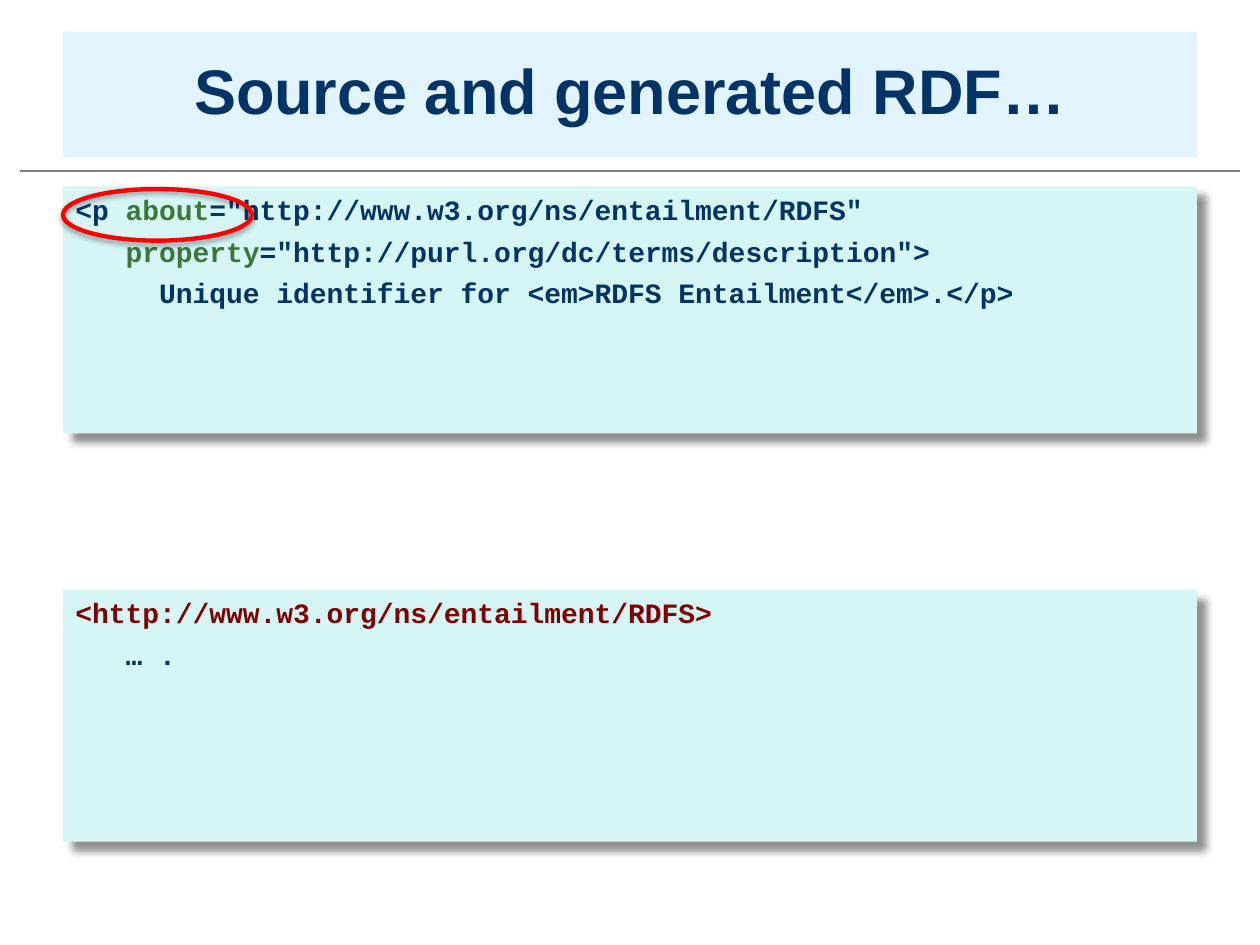
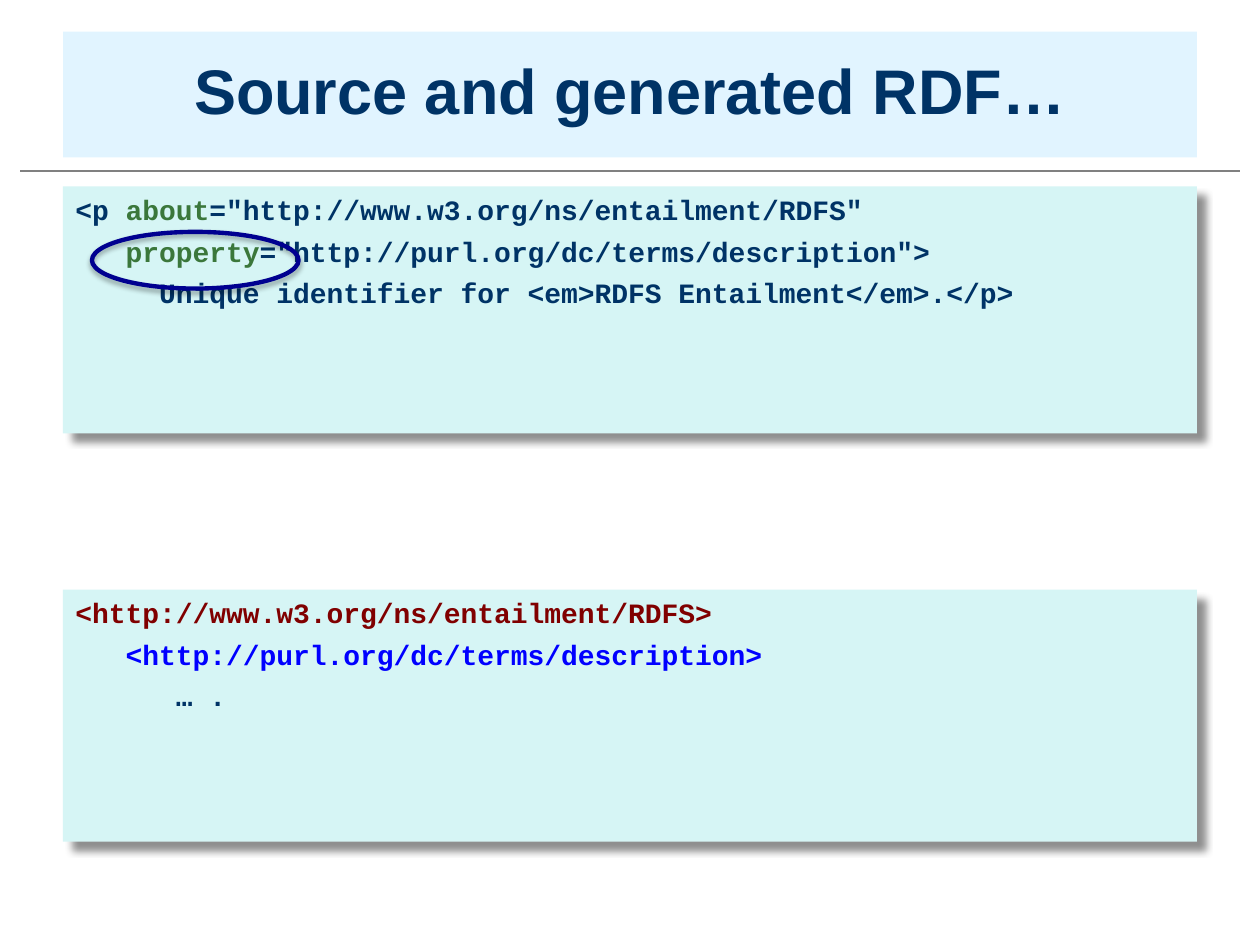
from dataclasses import dataclass

from lxml import etree
from pptx import Presentation
from pptx.dml.color import RGBColor
from pptx.enum.shapes import MSO_CONNECTOR, MSO_SHAPE
from pptx.enum.text import MSO_ANCHOR, MSO_AUTO_SIZE, PP_ALIGN
from pptx.oxml.ns import qn
from pptx.util import Inches, Pt

RECTANGLE, OVAL = MSO_SHAPE.RECTANGLE, MSO_SHAPE.OVAL
STRAIGHT = MSO_CONNECTOR.STRAIGHT
TOP, MIDDLE = MSO_ANCHOR.TOP, MSO_ANCHOR.MIDDLE
LEFT, CENTER = PP_ALIGN.LEFT, PP_ALIGN.CENTER
NO_AUTOFIT = MSO_AUTO_SIZE.NONE
TITLE_ONLY = 5

COLORS = {
    "text": "003366",
    "title_band": "E1F4FF",
    "panel": "D6F5F5",
    "rule": "808080",
    "attribute": "3B773B",
    "subject": "800000",
    "predicate": "0000FF",
    "red_ring": "FF0000",
    "navy_ring": "000090",
    "shadow": "000000",
}
TITLE_FONT, CODE_FONT = "Arial", "Courier New"
MARGIN, CONTENT_WIDTH = 0.5, 9

# A code line is a list of (text, colour name) pieces
CodeLine = list[tuple[str, str]]


@dataclass(frozen=True)
class Box:
    left: float
    top: float
    width: float
    height: float

    def lengths(self) -> list:
        return [Inches(n) for n in (self.left, self.top, self.width, self.height)]


@dataclass(frozen=True)
class Shadow:
    opacity: int  # percent
    blur: float  # points
    distance: float  # points
    angle: int  # degrees


@dataclass(frozen=True)
class Ring:
    box: Box
    color: str


@dataclass(frozen=True)
class RdfStep:
    ring: Ring
    generated: list[CodeLine]


TITLE_BOX = Box(MARGIN, 0.25, CONTENT_WIDTH, 1)
SOURCE_BOX = Box(MARGIN, 1.48, CONTENT_WIDTH, 1.96)
GENERATED_BOX = Box(MARGIN, 4.68, CONTENT_WIDTH, 2)
PANEL_SHADOW = Shadow(43, 4, 7, 45)
RING_SHADOW = Shadow(35, 3.1, 1.8, 90)

# Slide content
TITLE = "Source and generated RDF…"
SOURCE: list[CodeLine] = [
    [("<p ", "text"), ("about", "attribute"),
     ('="http://www.w3.org/ns/entailment/RDFS"', "text")],
    [("   ", "text"), ("property", "attribute"),
     ('="http://purl.org/dc/terms/description">', "text")],
    [("     Unique identifier for <em>RDFS Entailment</em>.</p>", "text")],
]
SUBJECT: CodeLine = [("<http://www.w3.org/ns/entailment/RDFS>", "subject")]
PREDICATE: CodeLine = [("   ", "text"),
                       ("<http://purl.org/dc/terms/description>", "predicate")]
STEPS = [
    RdfStep(Ring(Box(0.5, 1.5, 1.5, 0.41), "red_ring"),
            [SUBJECT, [("   … .", "text")]]),
    RdfStep(Ring(Box(0.73, 1.84, 1.64, 0.45), "navy_ring"),
            [SUBJECT, PREDICATE, [("      … .", "text")]]),
]


def rgb(name: str) -> RGBColor:
    return RGBColor.from_string(COLORS[name])


def set_shadow(shape, shadow: Shadow) -> None:
    shape.shadow.inherit = False
    effects = shape._element.spPr.find(qn("a:effectLst"))
    outer = etree.SubElement(
        effects, qn("a:outerShdw"), blurRad=str(int(Pt(shadow.blur))),
        dist=str(int(Pt(shadow.distance))), dir=str(shadow.angle * 60000),
        algn="ctr", rotWithShape="0")
    color = etree.SubElement(outer, qn("a:srgbClr"), val=COLORS["shadow"])
    etree.SubElement(color, qn("a:alpha"), val=str(shadow.opacity * 1000))


def add_rule(slide) -> None:
    rule = slide.shapes.add_connector(
        STRAIGHT, Inches(0.16), Inches(1.36), Inches(9.84), Inches(1.36))
    rule.line.color.rgb = rgb("rule")
    rule.line.width = Pt(1)
    etree.SubElement(rule._element.spPr, qn("a:effectLst"))


def format_title(slide) -> None:
    title = slide.shapes.title
    title.left, title.top, title.width, title.height = TITLE_BOX.lengths()
    title.fill.solid()
    title.fill.fore_color.rgb = rgb("title_band")
    frame = title.text_frame
    frame.text = TITLE
    frame.auto_size = NO_AUTOFIT
    frame.vertical_anchor = MIDDLE
    paragraph = frame.paragraphs[0]
    paragraph.alignment = CENTER
    paragraph.line_spacing = 0.9
    font = paragraph.font
    font.name, font.size, font.bold = TITLE_FONT, Pt(36), True
    font.color.rgb = rgb("text")


def add_code_panel(slide, box: Box, lines: list[CodeLine]) -> None:
    panel = slide.shapes.add_shape(RECTANGLE, *box.lengths())
    panel.fill.solid()
    panel.fill.fore_color.rgb = rgb("panel")
    panel.line.fill.background()
    set_shadow(panel, PANEL_SHADOW)
    frame = panel.text_frame
    frame.word_wrap = True
    frame.vertical_anchor = TOP
    for index, line in enumerate(lines):
        paragraph = frame.add_paragraph() if index else frame.paragraphs[0]
        paragraph.alignment = LEFT
        paragraph.space_before = Pt(4.5 if index else 0)
        font = paragraph.font
        font.name, font.size, font.bold = CODE_FONT, Pt(16), True
        for text, color in line:
            run = paragraph.add_run()
            run.text = text
            run.font.color.rgb = rgb(color)


def add_ring(slide, ring: Ring) -> None:
    oval = slide.shapes.add_shape(OVAL, *ring.box.lengths())
    oval.fill.background()
    oval.line.color.rgb = rgb(ring.color)
    oval.line.width = Pt(2.5)
    set_shadow(oval, RING_SHADOW)


def add_step_slide(presentation, step: RdfStep) -> None:
    slide = presentation.slides.add_slide(presentation.slide_layouts[TITLE_ONLY])
    format_title(slide)
    add_rule(slide)
    add_code_panel(slide, SOURCE_BOX, SOURCE)
    add_code_panel(slide, GENERATED_BOX, step.generated)
    add_ring(slide, step.ring)


def main() -> None:
    presentation = Presentation()
    presentation.slide_width = Inches(10)
    presentation.slide_height = Inches(7.5)
    for step in STEPS:
        add_step_slide(presentation, step)
    presentation.save("out.pptx")


if __name__ == "__main__":
    main()
